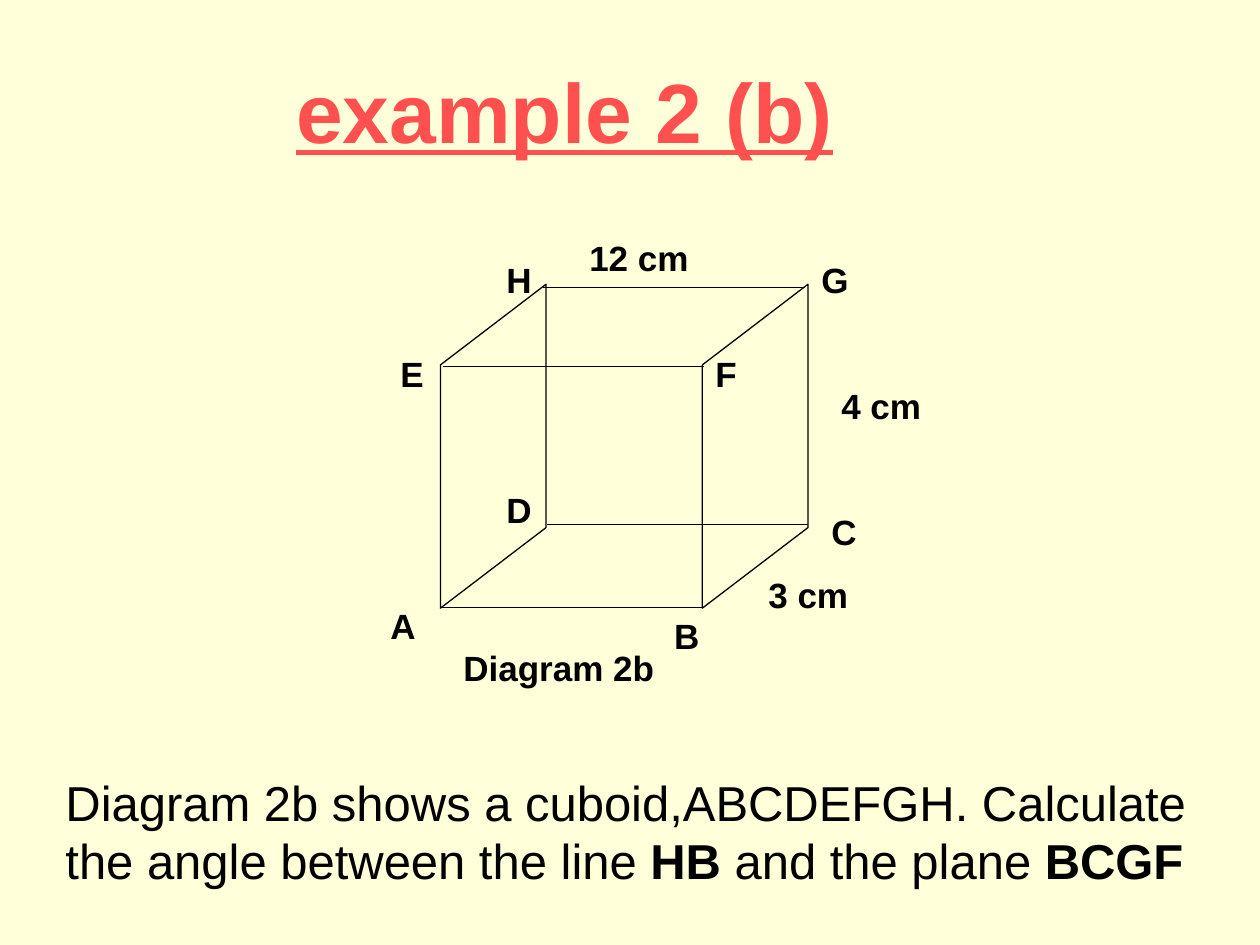
from lxml.etree import SubElement
from pptx import Presentation
from pptx.dml.color import RGBColor
from pptx.enum.shapes import MSO_CONNECTOR as CONN, MSO_SHAPE as SHAPE
from pptx.oxml.ns import qn
from pptx.util import Cm, Pt

COLORS = {"paper": "FFFFD9", "title": "FF5050", "ink": "000000"}
TITLE = {"size": Pt(48), "bold": True, "underline": True}
LABEL = {"size": Pt(20), "bold": True}
BODY = {"size": Pt(28)}

LABEL_H = 1.09
LABELS = [
    ("A", 0, 7.42, 1.07), ("B", 5.72, 7.62, 1.07),
    ("C", 8.89, 5.51, 1.07), ("D", 2.34, 5.08, 1.07),
    ("E", 0.2, 2.34, 1.07), ("F", 6.55, 2.34, 1.07),
    ("G", 8.69, 0.43, 1.07), ("H", 2.34, 0.43, 1.07),
    ("4 cm", 9.09, 2.97, 2.34), ("12 cm", 4.01, 0, 4.24),
    ("3 cm", 7.62, 6.78, 2.34), ("Diagram 2b", 1.47, 8.26, 4.45),
]
FACE_W, FACE_H, FACE_Y = 6.53, 2.13, 3.28
FACE_LEFTS = [4.34, -0.94]
EDGE_LENGTH = 5.26
EDGES = [(1.27, 7.59), (3.4, 5.92), (3.33, 1.14), (1.32, 2.74)]


def rgb(name):
    return RGBColor.from_string(COLORS[name])


def add_text(s, box, runs, fmt, color="ink"):
    tf = s.shapes.add_textbox(*map(Cm, box)).text_frame
    tf.word_wrap = True
    p = tf.paragraphs[0]
    for text, extra in runs:
        r = p.add_run()
        r.text = text
        r.font.name = "Arial"
        r.font.color.rgb = rgb(color)
        for key, value in {**fmt, **extra}.items():
            setattr(r.font, key, value)


def set_line(sp):
    sp.line.color.rgb = rgb("ink")
    sp.line.width = Pt(0.75)


def add_face(s, x, y):
    sp = s.shapes.add_shape(SHAPE.PARALLELOGRAM, Cm(x), Cm(y), Cm(FACE_W), Cm(FACE_H))
    sp.adjustments[0] = 0.763
    sp.rotation = 90
    sp._element.spPr.find(qn("a:xfrm")).set("flipH", "1")
    sp.shadow.inherit = False
    sp.fill.background()
    set_line(sp)


def add_edge(s, x, y):
    line = s.shapes.add_connector(CONN.STRAIGHT, Cm(x), Cm(y), Cm(x + EDGE_LENGTH), Cm(y))
    set_line(line)
    SubElement(line._element.spPr, qn("a:effectLst"))


def add_title(s, box):
    add_text(s, box, [("example 2 (b)", {})], TITLE, "title")


def add_cuboid(s, left, top):
    for x in FACE_LEFTS:
        add_face(s, left + x, top + FACE_Y)
    for x, y in EDGES:
        add_edge(s, left + x, top + y)
    for text, x, y, width in LABELS:
        add_text(s, (left + x, top + y, width, LABEL_H), [(text, {})], LABEL)


def add_question(s, box):
    bold = {"bold": True}
    add_text(s, box, [
        ("Diagram 2b shows a cuboid,ABCDEFGH. Calculate the angle between the line ", {}),
        ("HB ", bold),
        ("and the plane ", {}),
        ("BCGF", bold),
    ], BODY)


def main():
    prs = Presentation()
    prs.slide_width, prs.slide_height = Cm(25.4), Cm(19.05)
    s = prs.slides.add_slide(prs.slide_layouts[6])
    fill = s.background.fill
    fill.solid()
    fill.fore_color.rgb = rgb("paper")
    add_title(s, (5.72, 1.07, 12.9, 2.29))
    add_question(s, (1.07, 15.44, 23.5, 2.74))
    add_cuboid(s, 7.62, 4.65)
    prs.save("out.pptx")


if __name__ == "__main__":
    main()
